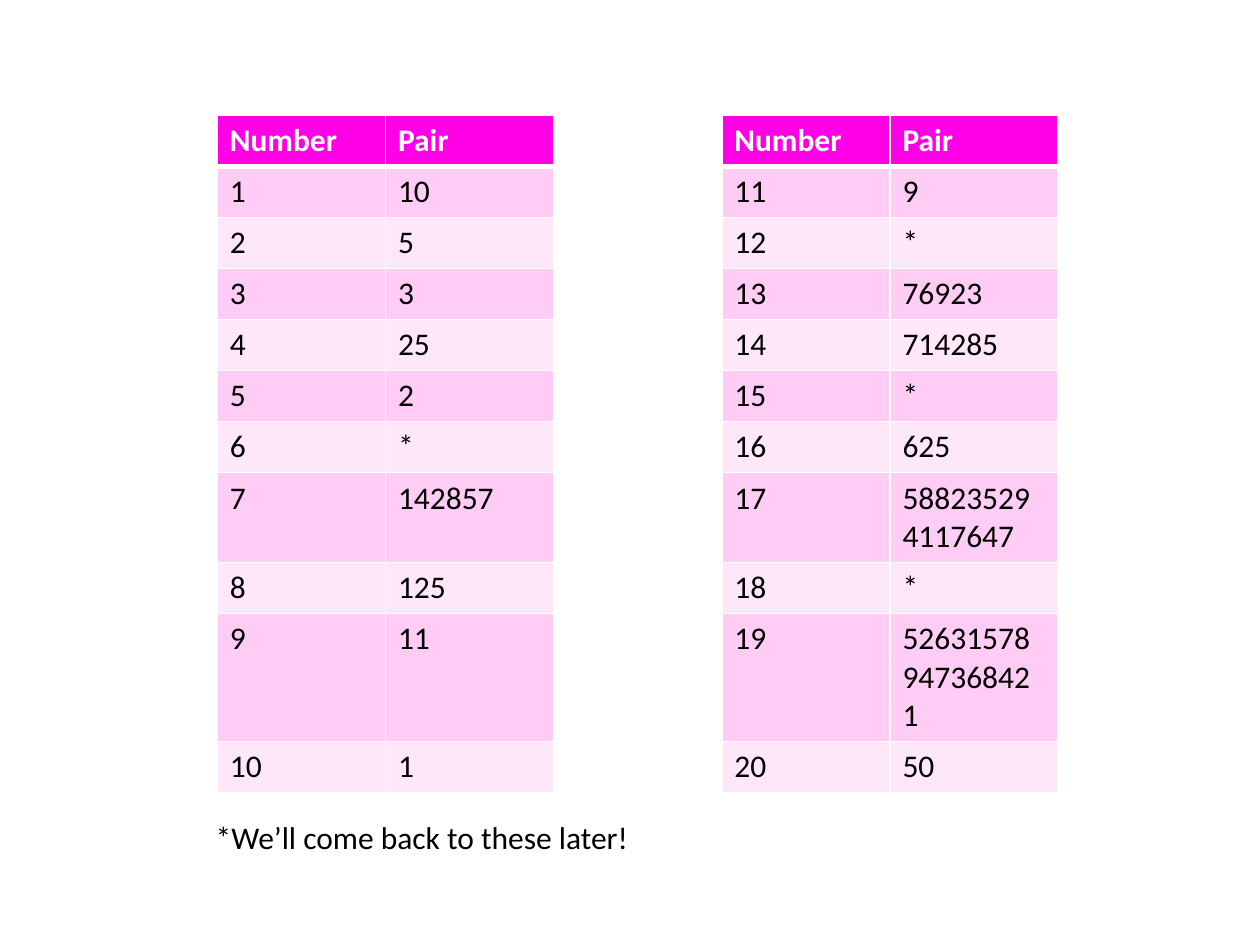
from typing import NamedTuple

from lxml.etree import SubElement
from pptx import Presentation
from pptx.dml.color import RGBColor
from pptx.enum.text import MSO_AUTO_SIZE
from pptx.oxml.ns import qn
from pptx.util import Cm, Pt

WHITE = RGBColor(0xFF, 0xFF, 0xFF)
BLACK = RGBColor(0x00, 0x00, 0x00)
MAGENTA = RGBColor(0xFF, 0x00, 0xE6)
PINK = RGBColor(0xFF, 0xCC, 0xF5)
PALE_PINK = RGBColor(0xFF, 0xE7, 0xFA)

COLUMN_WIDTH = Cm(3.39)
ROW_HEIGHT = Cm(1.03)
GAP_COLUMN = 2
PAIRS = [
    "10", "5", "3", "25", "2", "*", "142857", "125", "11", "1",
    "9", "*", "76923", "714285", "*", "625", "588235294117647", "*",
    "52631578947368421", "50",
]


class RowStyle(NamedTuple):
    fill: RGBColor
    color: RGBColor
    bold: bool = False
    top_line: int = 1
    bottom_line: int = 1


HEADER = RowStyle(MAGENTA, WHITE, bold=True, bottom_line=3)
FIRST = RowStyle(PINK, BLACK, top_line=3)
ODD = RowStyle(PINK, BLACK)
EVEN = RowStyle(PALE_PINK, BLACK)


def add_text(para, text: str, color: RGBColor, bold: bool = False) -> None:
    para.font.size = Pt(18)
    if text:
        span = para.add_run()
        span.text = text
        span.font.name = "Calibri"
        span.font.size = Pt(18)
        span.font.bold = bold
        span.font.color.rgb = color


def add_border(cell, side: str, points: int) -> None:
    properties = cell._tc.get_or_add_tcPr()
    line = SubElement(properties, qn(f"a:ln{side}"), w=str(Pt(points)))
    fill = SubElement(line, qn("a:solidFill"))
    SubElement(fill, qn("a:srgbClr"), val=str(WHITE))


def format_cell(cell, text: str, style: RowStyle, is_gap: bool) -> None:
    # Borders come before the fill in the cell properties
    widths = {"L": 1, "R": 1, "T": style.top_line, "B": style.bottom_line}
    for side, points in widths.items():
        add_border(cell, side, points)
    cell.fill.solid()
    cell.fill.fore_color.rgb = WHITE if is_gap else style.fill
    add_text(cell.text_frame.paragraphs[0], text, style.color, style.bold)


def row_style(index: int) -> RowStyle:
    if index < 2:
        return (HEADER, FIRST)[index]
    return ODD if index % 2 else EVEN


def add_pair_table(page) -> None:
    half = len(PAIRS) // 2
    rows = [["Number", "Pair", "", "Number", "Pair"]]
    for number in range(1, half + 1):
        rows.append([
            str(number), PAIRS[number - 1], "",
            str(number + half), PAIRS[number + half - 1],
        ])
    columns = len(rows[0])
    table = page.shapes.add_table(
        len(rows), columns, Cm(4.38), Cm(2.32),
        COLUMN_WIDTH * columns, ROW_HEIGHT * len(rows),
    ).table
    for column in table.columns:
        column.width = COLUMN_WIDTH
    for row_index, texts in enumerate(rows):
        table.rows[row_index].height = ROW_HEIGHT
        for column_index, text in enumerate(texts):
            format_cell(table.cell(row_index, column_index), text,
                        row_style(row_index), column_index == GAP_COLUMN)


def add_footnote(page) -> None:
    box = page.shapes.add_textbox(Cm(4.1), Cm(16.36), Cm(9.2), Cm(1.03))
    frame = box.text_frame
    frame.word_wrap = False
    frame.auto_size = MSO_AUTO_SIZE.SHAPE_TO_FIT_TEXT
    add_text(frame.paragraphs[0], "*We’ll come back to these later!", BLACK)


def main() -> None:
    deck = Presentation()
    deck.slide_width, deck.slide_height = Cm(25.4), Cm(19.05)
    page = deck.slides.add_slide(deck.slide_layouts[6])  # blank layout
    add_pair_table(page)
    add_footnote(page)
    deck.save("out.pptx")


if __name__ == "__main__":
    main()
